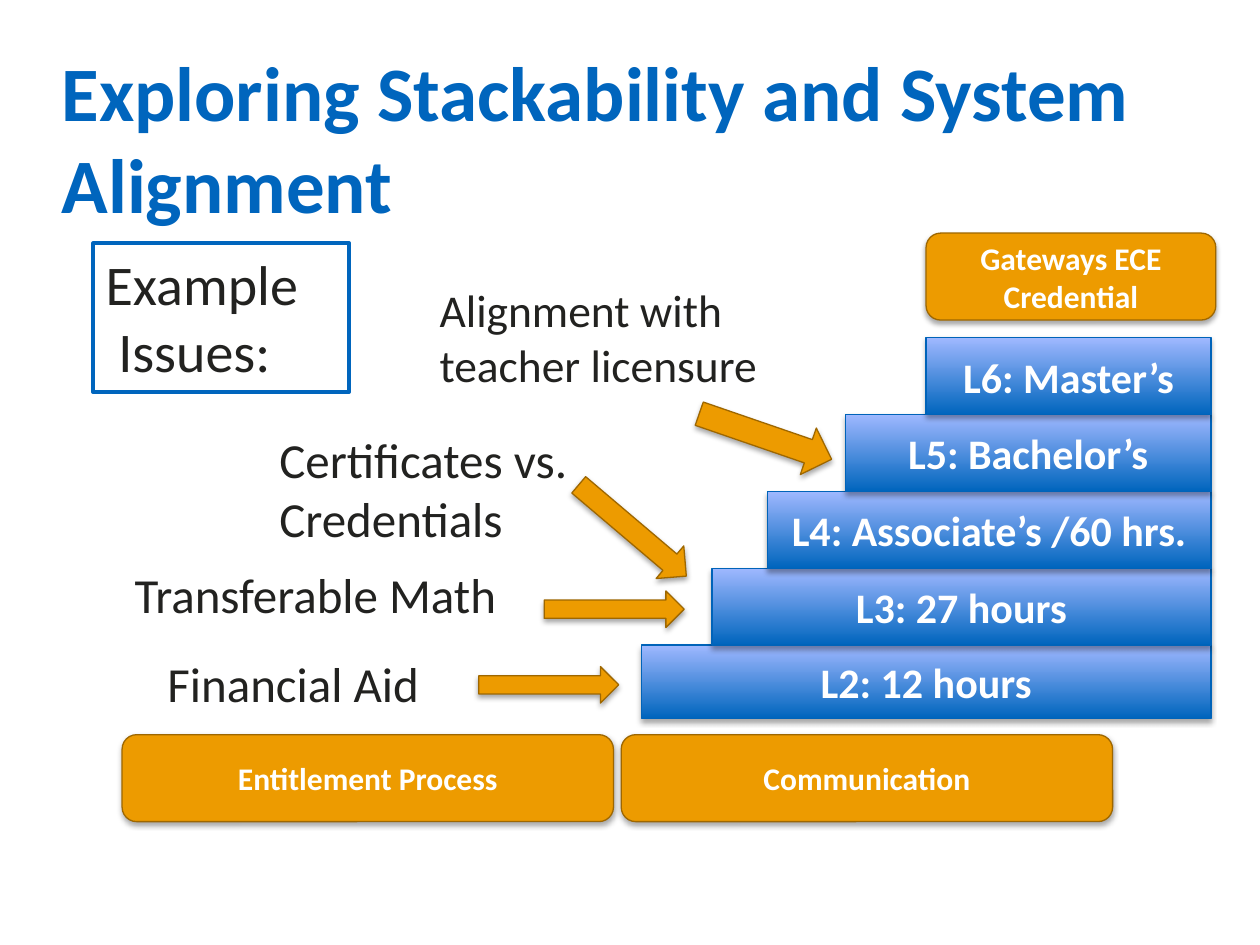
"""Build the slide on stackable credentials and system alignment."""
from dataclasses import dataclass

from lxml import etree
from pptx import Presentation
from pptx import util as u
from pptx.dml.color import RGBColor
from pptx.enum import shapes, text
from pptx.oxml.ns import qn


@dataclass(frozen=True)
class Theme:
    font: str = "Calibri"
    blue: str = "0065BD"
    sky: str = "9FB8FF"
    edge: str = "0063B9"
    orange: str = "ED9B00"
    brown: str = "9E6700"
    ink: str = "222220"
    white: str = "FFFFFF"
    title: int = 44
    heading: int = 32
    issue: int = 28
    licensure: int = 26
    level: int = 24
    label: int = 18


class Slide:
    def __init__(self, theme):
        self.theme = theme
        self.deck = Presentation()
        self.deck.slide_width, self.deck.slide_height = u.Pt(720), u.Pt(540)
        self.page = self.deck.slides.add_slide(self.deck.slide_layouts[1])

    def place(self, shape, left, top, width, height):
        shape.left, shape.top = u.Pt(left), u.Pt(top)
        shape.width, shape.height = u.Pt(width), u.Pt(height)

    def set_text(self, shape, words, size, color, bold=False, centred=False):
        frame = shape.text_frame
        frame.word_wrap = True
        frame.auto_size = text.MSO_AUTO_SIZE.NONE
        frame.vertical_anchor = text.MSO_ANCHOR.MIDDLE if centred else text.MSO_ANCHOR.TOP
        frame.text = words
        for para in frame.paragraphs:
            para.alignment = text.PP_ALIGN.CENTER if centred else text.PP_ALIGN.LEFT
            para.space_before = u.Pt(0)
            if shape.is_placeholder:
                properties = para._p.get_or_add_pPr()
                properties.set("marL", "0")
                properties.set("indent", "0")
                etree.SubElement(properties, qn("a:buNone"))
            font = para.font
            font.name, font.size, font.bold = self.theme.font, u.Pt(size), bold
            font.color.rgb = RGBColor.from_string(color)

    def outline(self, shape, color, width=0.75):
        shape.line.color.rgb = RGBColor.from_string(color)
        shape.line.width = u.Pt(width)

    def shade(self, shape):
        shape.shadow.inherit = False
        effects = shape._element.spPr.find(qn("a:effectLst"))
        shadow = etree.SubElement(
            effects, qn("a:outerShdw"), blurRad=str(u.Pt(3.1)), dist=str(u.Pt(1.8)),
            dir="5400000", rotWithShape="0")
        color = etree.SubElement(shadow, qn("a:srgbClr"), val="000000")
        etree.SubElement(color, qn("a:alpha"), val="35000")

    def preset(self, kind, *frame):
        return self.page.shapes.add_shape(kind, *map(u.Pt, frame))

    def title(self, words, *frame):
        box = self.page.shapes.title
        self.place(box, *frame)
        self.set_text(box, words, self.theme.title, self.theme.blue, bold=True)

    def level(self, words, *frame, body=False):
        if body:
            box = self.page.placeholders[1]
            self.place(box, *frame)
            tree = box._element.getparent()
            tree.append(box._element)
        else:
            box = self.preset(shapes.MSO_SHAPE.RECTANGLE, *frame)
        box.fill.gradient()
        box.fill.gradient_angle = 90
        for stop, color in zip(box.fill.gradient_stops, (self.theme.blue, self.theme.sky)):
            stop.color.rgb = RGBColor.from_string(color)
        self.outline(box, self.theme.edge)
        self.shade(box)
        self.set_text(box, words, self.theme.level, self.theme.white, bold=True, centred=True)

    def orange(self, kind, *frame):
        shape = self.preset(kind, *frame)
        shape.fill.solid()
        shape.fill.fore_color.rgb = RGBColor.from_string(self.theme.orange)
        self.outline(shape, self.theme.brown)
        self.shade(shape)
        return shape

    def arrow(self, *frame, turn=0):
        self.orange(shapes.MSO_SHAPE.RIGHT_ARROW, *frame).rotation = turn

    def label(self, words, *frame):
        box = self.orange(shapes.MSO_SHAPE.ROUNDED_RECTANGLE, *frame)
        self.set_text(box, words, self.theme.label, self.theme.white, bold=True, centred=True)

    def heading(self, words, *frame):
        box = self.preset(shapes.MSO_SHAPE.RECTANGLE, *frame)
        box.fill.background()
        box.shadow.inherit = False
        self.outline(box, self.theme.blue, 2.25)
        self.set_text(box, words, self.theme.heading, self.theme.ink)

    def issue(self, words, size, *frame):
        box = self.page.shapes.add_textbox(*map(u.Pt, frame))
        self.set_text(box, words, size, self.theme.ink)


def main():
    theme = Theme()
    slide = Slide(theme)
    slide.title("Exploring Stackability and System Alignment", 28, 21.6, 664, 70.6)

    right, bottom, rise = 692, 410.4, 43.9
    base = 41.8
    levels = [
        ("L2: 12 hours", 366.5),
        ("L3: 27 hours", 406.8),
        ("L4: Associate’s /60 hrs.", 438.5),
        ("L5: Bachelor’s", 483.1),
        ("L6: Master’s", 529.2),
    ]
    for step, (words, left) in enumerate(levels):
        top = bottom - base - step * rise
        height = rise if step else base
        slide.level(words, left, top, right - left, height, body=step == 1)

    slide.issue("Financial Aid", theme.issue, 88.6, 370, 160.6, 41)
    slide.arrow(273.6, 380.9, 80, 20.9)
    slide.heading("Example\n Issues:", 53.3, 139, 146.2, 85)
    slide.issue("Transferable Math", theme.issue, 69.8, 319, 221.8, 41)
    slide.arrow(311, 337.7, 80, 20.9)
    slide.issue("Certificates vs. Credentials", theme.issue, 152.6, 241.9, 221.8, 74.9)
    slide.arrow(321.1, 290.9, 80.6, 24.5, turn=40.3)
    slide.issue("Alignment with teacher licensure", theme.licensure, 244.1, 157.7, 221.8, 70.6)
    slide.arrow(397.4, 235.4, 80, 28.1, turn=19)

    for words, left, top, width in [
        ("Entitlement Process", 69.8, 419.8, 280.8),
        ("Communication", 355, 419.8, 280.8),
        ("Gateways ECE Credential", 529.2, 133.2, 165.6),
    ]:
        slide.label(words, left, top, width, 49.7)
    slide.deck.save("out.pptx")


if __name__ == "__main__":
    main()
